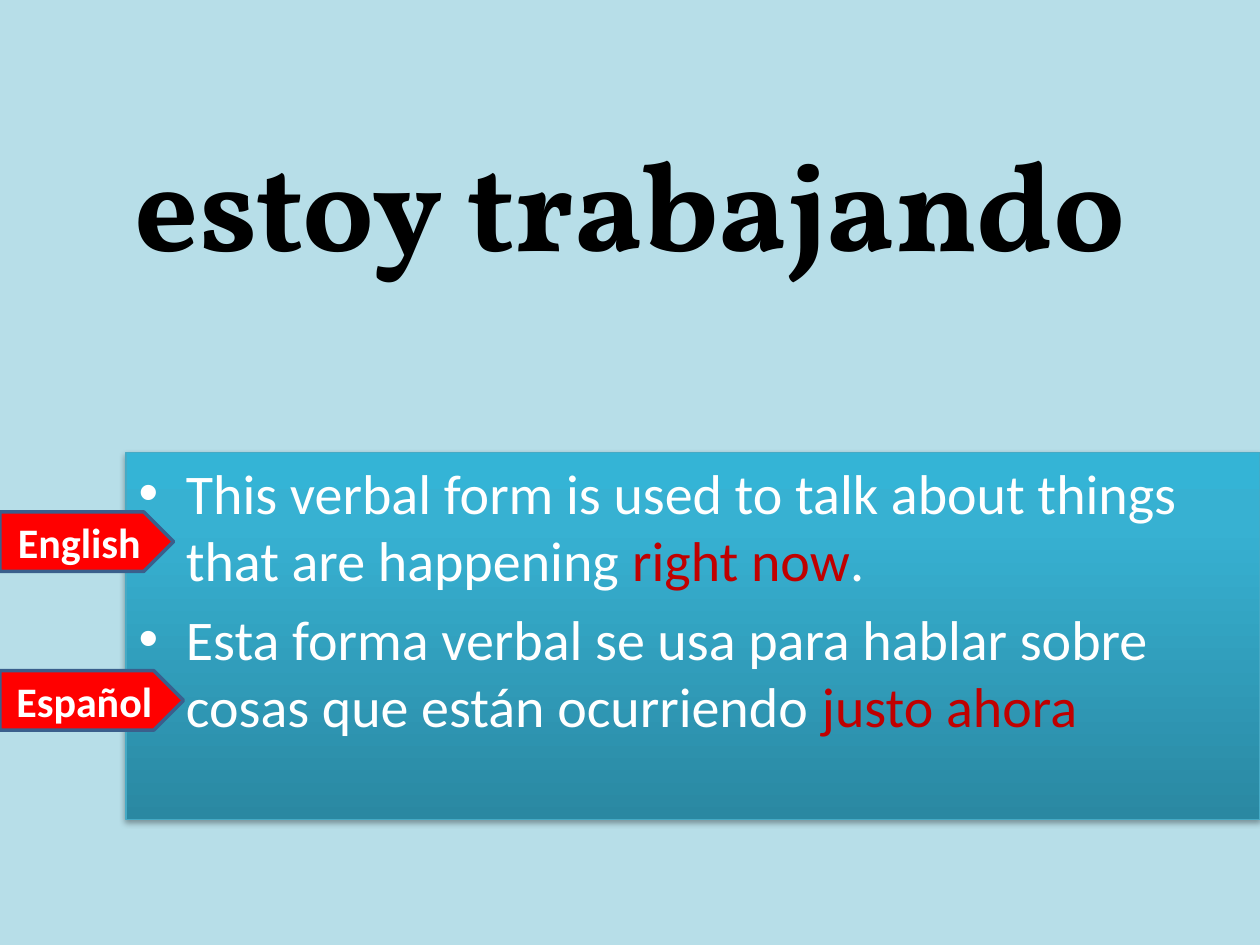
"""Build a grammar slide that explains a Spanish verbal form in two languages."""
import copy

import pptx
import pptx.dml.color
import pptx.enum.shapes
import pptx.enum.text
import pptx.oxml
import pptx.oxml.ns
import pptx.util

Cm = pptx.util.Cm
Pt = pptx.util.Pt

COLOURS = {
    "background": "B7DEE8",
    "title": "000000",
    "text": "FFFFFF",
    "highlight": "C00000",
    "panel_line": "46AAC5",
    "label": "FF0000",
    "label_line": "3A5F8C",
}
PANEL_STOPS = [(0, "2A88A2"), (0.8, "37B1D2"), (1, "34B4D6")]
PANEL_SHADOW = (
    f'<a:outerShdw {pptx.oxml.ns.nsdecls("a")} blurRad="{Pt(3.1)}" dist="{Pt(1.8)}" '
    'dir="5400000" rotWithShape="0"><a:srgbClr val="000000">'
    '<a:alpha val="35000"/></a:srgbClr></a:outerShdw>'
)
EXPLANATIONS = [
    [
        ("This verbal form is used to talk about things that are happening ", "text"),
        ("right now", "highlight"),
        (".", "text"),
    ],
    [
        ("Esta forma verbal se usa para hablar sobre cosas que están ocurriendo ", "text"),
        ("justo ahora", "highlight"),
    ],
]


def rgb(value):
    """Return the colour object for a hex string."""
    return pptx.dml.color.RGBColor.from_string(value)


def add_span(para, text, size=32, font="Calibri", colour="text", bold=False):
    """Add a formatted span of text to a paragraph."""
    span = para.add_run()
    span.text = text
    span.font.size = Pt(size)
    span.font.name = font
    span.font.bold = bold
    span.font.color.rgb = rgb(COLOURS[colour])


def move(shape, left, top, width, height):
    """Place a shape in the given box."""
    shape.left, shape.top, shape.width, shape.height = left, top, width, height


def fill_title(title, left, top, width, height):
    """Place the title, raised a little above the middle of its box."""
    move(title, left, top, width, height)
    frame = title.text_frame
    frame.vertical_anchor = pptx.enum.text.MSO_ANCHOR.MIDDLE
    frame.margin_bottom = Cm(1.35)
    para = frame.paragraphs[0]
    para.alignment = pptx.enum.text.PP_ALIGN.CENTER
    add_span(para, "estoy trabajando", size=72, font="Vollkorn", colour="title", bold=True)


def paint_panel(panel):
    """Give the panel its gradient, outline and shadow."""
    panel.fill.gradient()
    panel.fill.gradient_angle = 90
    properties = panel._element.spPr
    stop_list = properties.find(".//" + pptx.oxml.ns.qn("a:gsLst"))
    stop_list.append(copy.deepcopy(stop_list[-1]))
    for stop, (position, colour) in zip(panel.fill.gradient_stops, PANEL_STOPS):
        stop.position = position
        stop.color.rgb = rgb(colour)
    panel.line.color.rgb = rgb(COLOURS["panel_line"])
    panel.line.width = Pt(0.75)
    effects = pptx.oxml.parse_xml(
        f'<a:effectLst {pptx.oxml.ns.nsdecls("a")}>{PANEL_SHADOW}</a:effectLst>'
    )
    properties.append(effects)


def fill_panel(panel, left, top, width, height):
    """Place the body panel and write the explanations as a bulleted list."""
    move(panel, left, top, width, height)
    paint_panel(panel)
    frame = panel.text_frame
    for index, spans in enumerate(EXPLANATIONS):
        para = frame.add_paragraph() if index else frame.paragraphs[0]
        for text, colour in spans:
            add_span(para, text, colour=colour)


def add_label(page, text, left, top, width, height):
    """Add a pointed label that names a language."""
    kind = pptx.enum.shapes.MSO_SHAPE.PENTAGON
    label = page.shapes.add_shape(kind, left, top, width, height)
    label.shadow.inherit = False
    label.fill.solid()
    label.fill.fore_color.rgb = rgb(COLOURS["label"])
    label.line.color.rgb = rgb(COLOURS["label_line"])
    label.line.width = Pt(2)
    frame = label.text_frame
    frame.vertical_anchor = pptx.enum.text.MSO_ANCHOR.MIDDLE
    para = frame.paragraphs[0]
    para.alignment = pptx.enum.text.PP_ALIGN.CENTER
    add_span(para, text, size=24, bold=True)


def main():
    """Build and save the deck."""
    deck = pptx.Presentation()
    deck.slide_width, deck.slide_height = Cm(25.4), Cm(19.05)
    page = deck.slides.add_slide(deck.slide_layouts[1])
    page.background.fill.solid()
    page.background.fill.fore_color.rgb = rgb(COLOURS["background"])
    fill_title(page.shapes.title, Cm(1.27), Cm(0), Cm(22.86), Cm(9.32))
    fill_panel(page.placeholders[1], Cm(2.54), Cm(9.12), Cm(22.86), Cm(7.4))
    add_label(page, "English", Cm(0), Cm(10.32), Cm(3.5), Cm(1.2))
    add_label(page, "Español", Cm(0), Cm(13.52), Cm(3.7), Cm(1.2))
    deck.save("out.pptx")


if __name__ == "__main__":
    main()
